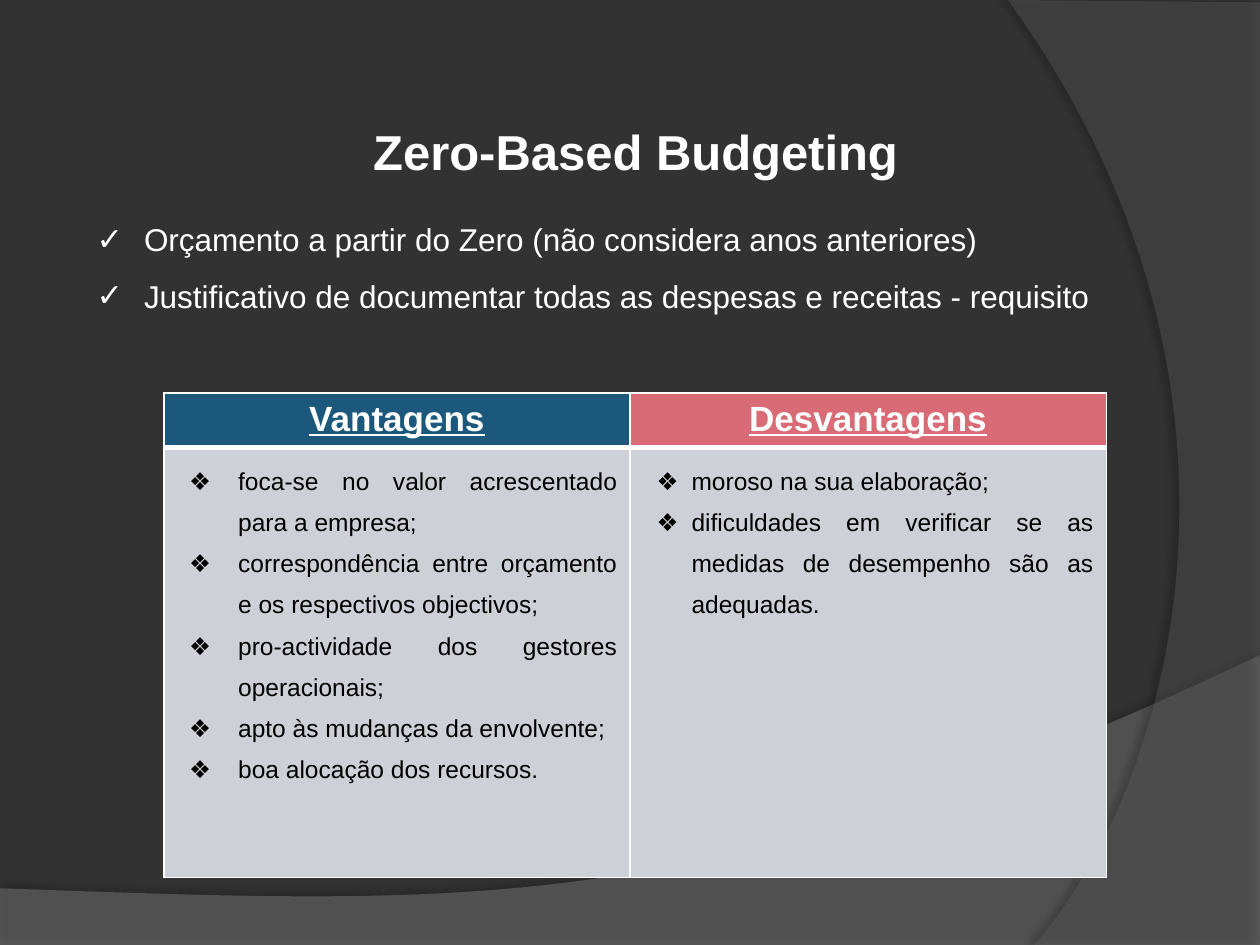
import dataclasses
import typing

import lxml.etree
import pptx
import pptx.dml.color
import pptx.enum.text
import pptx.oxml
import pptx.oxml.ns
import pptx.util

Pt = pptx.util.Pt
qn = pptx.oxml.ns.qn
Align = pptx.enum.text.PP_ALIGN
Point = tuple[float, float]
FONT = "Arial"
WHITE = "FFFFFF"


@dataclasses.dataclass(frozen=True)
class TextStyle:
    size: float
    color: str
    bold: bool = False
    underline: bool = False
    align: Align = Align.LEFT
    spacing: float = 1.5
    bullet: str = ""
    indent: float = 0
    hanging: float = 0


@dataclasses.dataclass(frozen=True)
class Wave:
    before: list[Point]
    curve: list[Point]  # start, two controls, end
    color: str
    alpha: int
    shadow_alpha: int
    shadow_distance: float
    shadow_angle: int


@dataclasses.dataclass(frozen=True)
class Column:
    heading: str
    color: str
    width: float
    points: list[str]
    style: TextStyle


WAVES = [
    Wave([(0, 507.6), (0, 540), (720, 540)],
         [(720, 374.4), (402.5, 524.9), (281.5, 517.7), (0, 507.6)],
         "7F7F7F", 45, 35, 3.5, 270),
    Wave([(720, 1.4), (720, 540)],
         [(591.1, 540), (673.2, 445.7), (733, 216), (576, 0)],
         "5E5E5E", 40, 45, 4, 180),
]

TITLE = TextStyle(28, WHITE, bold=True, align=Align.CENTER)
INTRO = TextStyle(18, WHITE, bullet="✓", indent=27, hanging=27)
HEADING = TextStyle(20, WHITE, bold=True, underline=True,
                    align=Align.CENTER, spacing=1)
ADVANTAGE = TextStyle(14, "000000", align=Align.JUSTIFY,
                      bullet="❖", indent=35.3, hanging=28)
DRAWBACK = dataclasses.replace(ADVANTAGE, indent=28, hanging=20)

COLUMNS = [
    Column("Vantagens", "1B587C", 266.4, [
        "foca-se no valor acrescentado para a empresa;",
        "correspondência entre orçamento e os respectivos objectivos;",
        "pro-actividade dos gestores operacionais;",
        "apto às mudanças da envolvente;",
        "boa alocação dos recursos.",
    ], ADVANTAGE),
    Column("Desvantagens", "D96B77", 272.2, [
        "moroso na sua elaboração;",
        "dificuldades em verificar se as medidas de desempenho são as adequadas.",
    ], DRAWBACK),
]
ROW_HEIGHTS = [31, 245.5]


def rgb(color: str) -> pptx.dml.color.RGBColor:
    return pptx.dml.color.RGBColor.from_string(color)


def paint(target: typing.Any, color: str) -> None:
    target.fill.solid()
    target.fill.fore_color.rgb = rgb(color)


def write(frame: typing.Any, lines: list[str], style: TextStyle) -> None:
    for number, line in enumerate(lines):
        paragraph = frame.add_paragraph() if number else frame.paragraphs[0]
        paragraph.alignment = style.align
        paragraph.line_spacing = style.spacing
        run = paragraph.add_run()
        run.text = line
        run.font.name = FONT
        run.font.size = Pt(style.size)
        run.font.bold = style.bold
        run.font.underline = style.underline
        run.font.color.rgb = rgb(style.color)
        if style.bullet:
            properties = paragraph._p.get_or_add_pPr()
            properties.set("marL", str(Pt(style.indent)))
            properties.set("indent", str(-Pt(style.hanging)))
            lxml.etree.SubElement(properties, qn("a:buFont"), typeface=FONT)
            lxml.etree.SubElement(properties, qn("a:buChar"), char=style.bullet)


def add_text(slide: typing.Any, box: tuple[float, float, float, float],
             lines: list[str], style: TextStyle) -> None:
    frame = slide.shapes.add_textbox(*map(Pt, box)).text_frame
    frame.word_wrap = True
    frame.auto_size = pptx.enum.text.MSO_AUTO_SIZE.SHAPE_TO_FIT_TEXT
    write(frame, lines, style)


def bezier(curve: list[Point], steps: int = 48) -> list[Point]:
    points = []
    for step in range(steps + 1):
        t = step / steps
        weights = ((1 - t) ** 3, 3 * t * (1 - t) ** 2, 3 * t ** 2 * (1 - t), t ** 3)
        points.append((sum(w * p[0] for w, p in zip(weights, curve)),
                       sum(w * p[1] for w, p in zip(weights, curve))))
    return points


def add_wave(slide: typing.Any, wave: Wave) -> None:
    start, *outline = [(Pt(x), Pt(y)) for x, y in wave.before + bezier(wave.curve)]
    builder = slide.shapes.build_freeform(*start)
    builder.add_line_segments(outline, close=True)
    shape = builder.convert_to_shape()
    paint(shape, wave.color)
    shape.line.fill.background()
    tint = shape._element.spPr.find(".//" + qn("a:srgbClr"))
    lxml.etree.SubElement(tint, qn("a:alpha"), val=str(wave.alpha * 1000))
    # Soft shadow along the curved edge
    shape.shadow.inherit = False
    effects = shape._element.spPr.find(qn("a:effectLst"))
    shadow = lxml.etree.SubElement(
        effects, qn("a:outerShdw"), blurRad=str(Pt(4)),
        dist=str(Pt(wave.shadow_distance)), dir=str(wave.shadow_angle * 60000),
        algn="ctr", rotWithShape="0")
    shade = lxml.etree.SubElement(shadow, qn("a:srgbClr"), val="000000")
    lxml.etree.SubElement(shade, qn("a:alpha"), val=str(wave.shadow_alpha * 1000))


def add_borders(cell: typing.Any, bottom: float) -> None:
    properties = cell._tc.get_or_add_tcPr()
    widths = {"a:lnL": 1, "a:lnR": 1, "a:lnT": 1, "a:lnB": bottom}
    for position, (side, width) in enumerate(widths.items()):
        border = properties.makeelement(qn(side), {"w": str(Pt(width))})
        properties.insert(position, border)
        fill = lxml.etree.SubElement(border, qn("a:solidFill"))
        lxml.etree.SubElement(fill, qn("a:srgbClr"), val=WHITE)


def fill_cell(cell: typing.Any, lines: list[str], style: TextStyle,
              color: str, bottom: float) -> None:
    write(cell.text_frame, lines, style)
    paint(cell, color)
    add_borders(cell, bottom)


def add_comparison(slide: typing.Any, left: float, top: float) -> None:
    width = sum(column.width for column in COLUMNS)
    table = slide.shapes.add_table(len(ROW_HEIGHTS), len(COLUMNS), Pt(left), Pt(top),
                                   Pt(width), Pt(sum(ROW_HEIGHTS))).table
    for row, height in zip(table.rows, ROW_HEIGHTS):
        row.height = Pt(height)
    for index, column in enumerate(COLUMNS):
        table.columns[index].width = Pt(column.width)
        fill_cell(table.cell(0, index), [column.heading], HEADING, column.color, 3)
        fill_cell(table.cell(1, index), column.points, column.style, "CDD1D7", 1)


def main() -> None:
    deck = pptx.Presentation()
    deck.slide_width, deck.slide_height = Pt(720), Pt(540)
    slide = deck.slides.add_slide(deck.slide_layouts[6])

    # Background
    paint(slide.background, "323232")
    for wave in WAVES:
        add_wave(slide, wave)

    # Introduction, comparison and title
    add_text(slide, (48.2, 111.6, 617.8, 72.7), [
        "Orçamento a partir do Zero (não considera anos anteriores)",
        "Justificativo de documentar todas as despesas e receitas - requisito",
    ], INTRO)
    add_comparison(slide, 93.6, 224.6)
    add_text(slide, (105.1, 49, 516.2, 53.3), ["Zero-Based Budgeting"], TITLE)

    deck.save("out.pptx")


if __name__ == "__main__":
    main()
